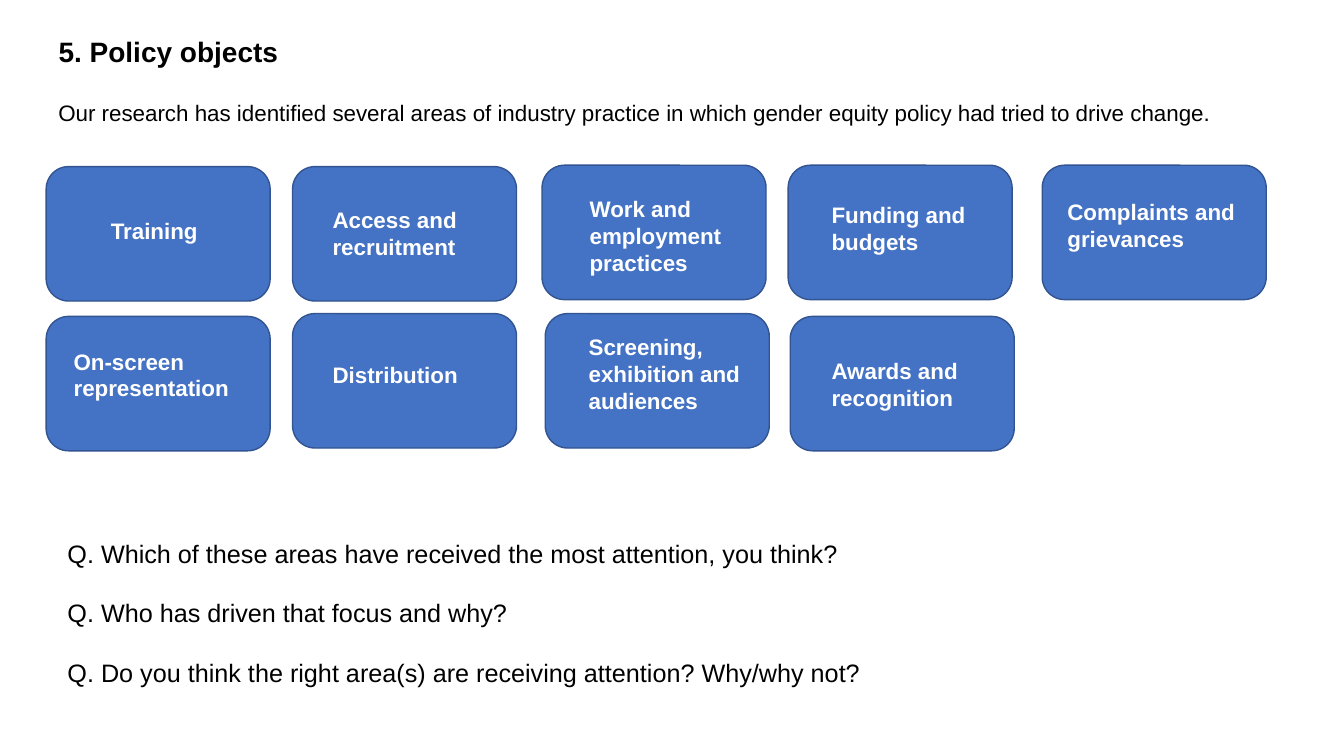
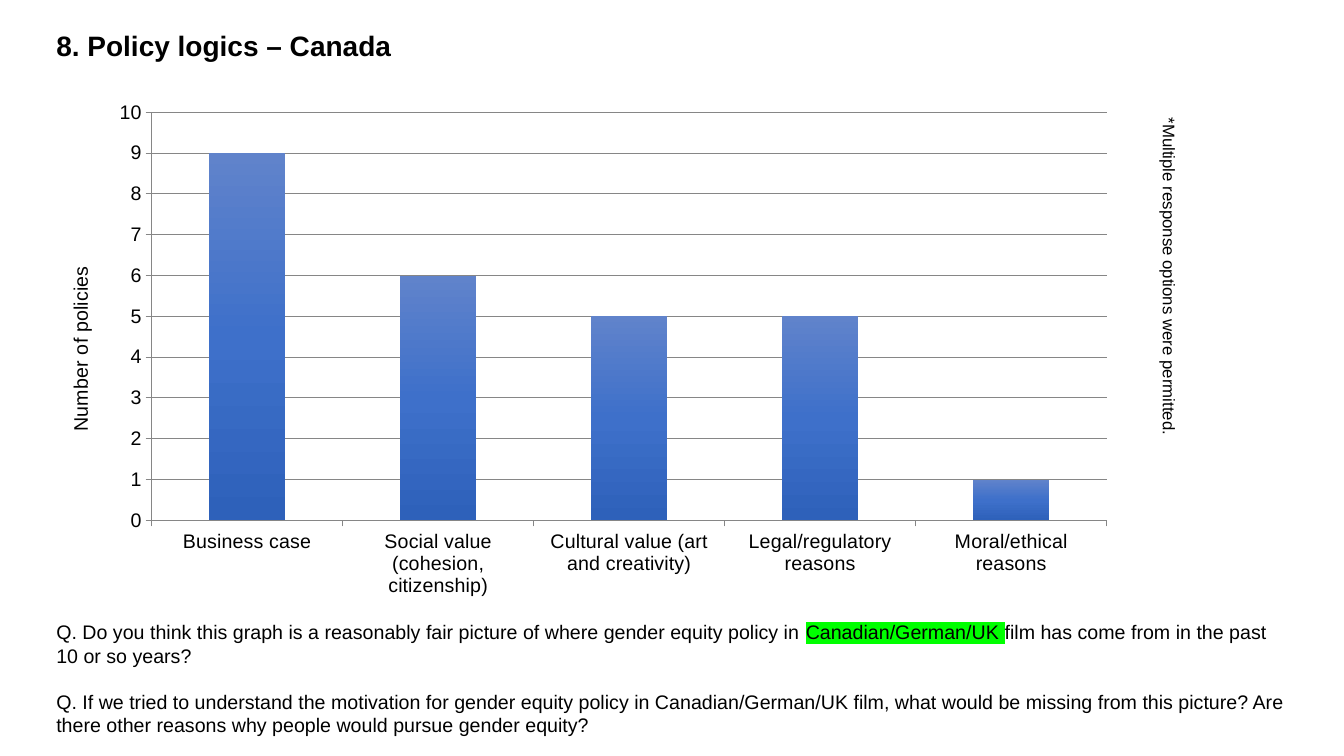
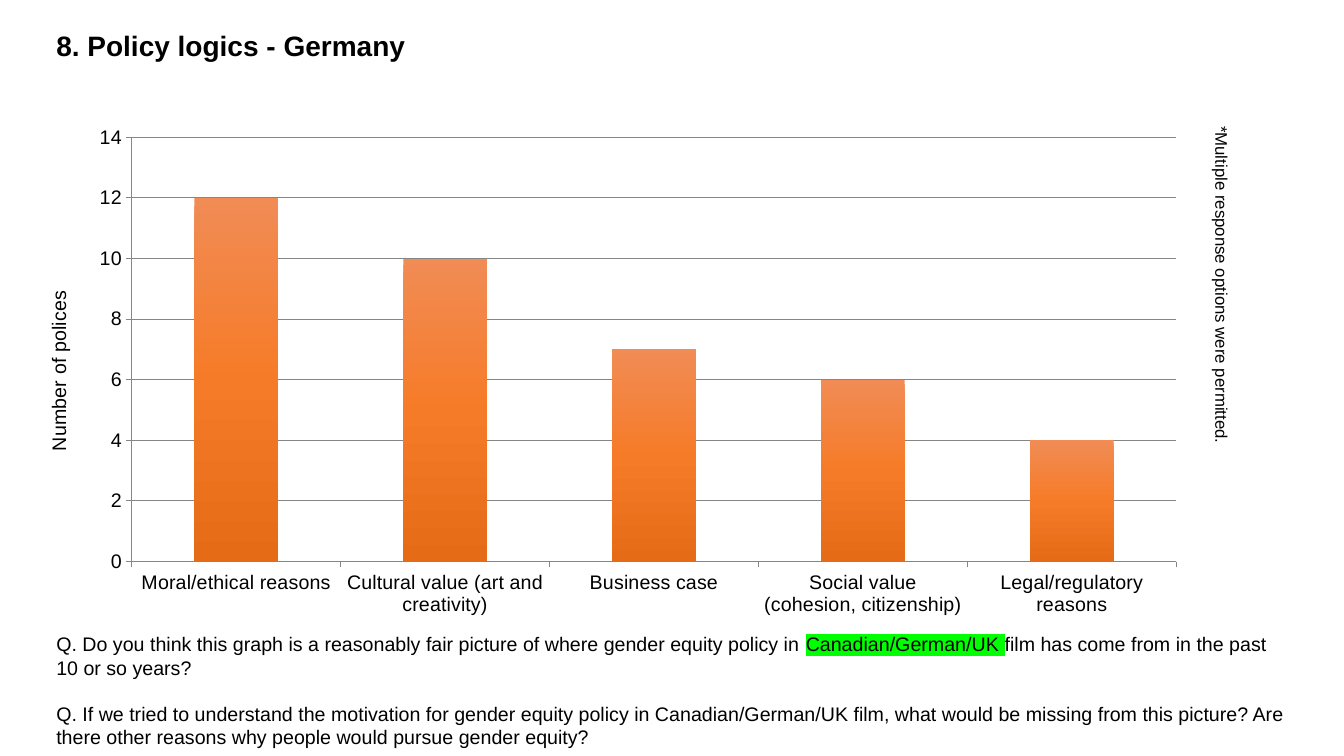
from copy import deepcopy

from lxml.etree import SubElement
from pptx import Presentation
from pptx.chart.data import CategoryChartData
from pptx.dml.color import RGBColor
from pptx.enum.chart import XL_CHART_TYPE as ChartType, XL_TICK_MARK as Tick
from pptx.enum.shapes import MSO_SHAPE as Shape
from pptx.enum.text import MSO_ANCHOR as Anchor, MSO_AUTO_SIZE as AutoSize, PP_ALIGN as Align
from pptx.oxml.ns import qn
from pptx.util import Pt

FONT = "Arial"
BLACK = RGBColor(0x00, 0x00, 0x00)
WHITE = RGBColor(0xFF, 0xFF, 0xFF)
GRID_GREY = RGBColor(0x86, 0x86, 0x86)
TILE_BLUE = RGBColor(0x44, 0x72, 0xC4)
TILE_EDGE = RGBColor(0x32, 0x54, 0x91)
HIGHLIGHT = RGBColor(0x00, 0xFF, 0x00)
# Bar gradients, top to bottom
BLUE_BARS = (RGBColor(0x60, 0x83, 0xCB), RGBColor(0x3E, 0x70, 0xCA), RGBColor(0x2E, 0x61, 0xBA))
ORANGE_BARS = (RGBColor(0xF1, 0x8C, 0x55), RGBColor(0xF6, 0x7B, 0x28), RGBColor(0xE5, 0x6B, 0x17))

LINE_HEIGHT = 1.15
TILE_W, TILE_H = 160, 96
CORNER_INSET = 4.7  # text margin a rounded rectangle adds by itself

INTRO = ("Our research has identified several areas of industry practice in which "
         "gender equity policy had tried to drive change.")
# label, tile (left, top), label start (left, top)
POLICY_AREAS = [
    ("Training", (33, 119), (79.2, 154.8)),
    ("Access and recruitment", (209, 119), (237.6, 147.6)),
    ("Work and employment practices", (387.2, 118), (421.2, 139.7)),
    ("Funding and budgets", (563, 118), (594, 144)),
    ("Complaints and grievances", (744.5, 118), (762.5, 141.8)),
    ("On-screen representation", (33, 226), (52.6, 248.4)),
    ("Distribution", (209, 224), (237.6, 257.8)),
    ("Screening, exhibition and audiences", (389.5, 224), (420.5, 238.3)),
    ("Awards and recognition", (564.5, 226), (594, 254.9)),
]
AREA_QUESTIONS = [
    ["Q. Which of these areas have received the most attention, you think?"],
    ["Q. Who has driven that focus and why?"],
    ["Q. Do you think the right area(s) are receiving attention? Why/why not?"],
]

LOGIC_QUESTIONS = [
    ["Q. Do you think this graph is a reasonably fair picture of where gender equity policy in ",
     "Canadian/German/UK ",
     "film has come from in the past 10 or so years?"],
    ["Q. If we tried to understand the motivation for gender equity policy in "
     "Canadian/German/UK film, what would be missing from this picture? "
     "Are there other reasons why people would pursue gender equity?"],
]
FOOTNOTE = "*Multiple response options were permitted."
BUSINESS = "Business case"
SOCIAL = "Social value (cohesion, citizenship)"
CULTURAL = "Cultural value (art and creativity)"
LEGAL = "Legal/regulatory reasons"
MORAL = "Moral/ethical reasons"
COUNTRIES = [
    dict(title="8. Policy logics – Canada", axis="Number of policies",
         counts={BUSINESS: 9, SOCIAL: 6, CULTURAL: 5, LEGAL: 5, MORAL: 1},
         bars=BLUE_BARS, top_value=10, step=1, chart_box=(33, 65, 773, 368.5),
         footnote_at=(835.2, 77), questions_top=439.2),
    dict(title="8. Policy logics - Germany", axis="Number of polices",
         counts={MORAL: 12, CULTURAL: 10, BUSINESS: 7, SOCIAL: 6, LEGAL: 4},
         bars=ORANGE_BARS, top_value=14, step=2, chart_box=(17.5, 83, 839.5, 364),
         footnote_at=(872.6, 83), questions_top=447.8),
]


def place(shape, left, top, width, height):
    shape.left, shape.top, shape.width, shape.height = map(Pt, (left, top, width, height))


def write(shape, paragraphs, size, colour=BLACK, bold=False):
    """Fill a shape with paragraphs, each a list of run texts, one line apart."""
    frame = shape.text_frame
    frame.word_wrap = True
    frame.auto_size = AutoSize.NONE
    frame.vertical_anchor = Anchor.TOP
    for index, texts in enumerate(paragraphs):
        paragraph = frame.add_paragraph() if index else frame.paragraphs[0]
        paragraph.alignment = Align.LEFT
        paragraph.space_before = Pt(round(size * LINE_HEIGHT, 1) if index else 0)
        for text in texts:
            run = paragraph.add_run()
            run.text = text
            run.font.size = Pt(size)
            run.font.bold = bold
            run.font.color.rgb = colour
            run.font.name = FONT
    return frame


def add_text(slide, text, size, box):
    label = slide.shapes.add_textbox(*map(Pt, box))
    write(label, [[text]], size)
    return label


def add_slide(deck, title, title_at, questions, size, questions_box):
    """Add a slide with its heading and unbulleted discussion questions."""
    slide = deck.slides.add_slide(deck.slide_layouts[1])
    heading, discussion = slide.placeholders
    place(heading, *title_at, 480, 32)
    write(heading, [[title]], 20, bold=True)
    place(discussion, *questions_box)
    for paragraph in write(discussion, questions, size).paragraphs:
        properties = paragraph._p.get_or_add_pPr()
        properties.set("marL", "0")
        properties.set("indent", "0")
        SubElement(properties, qn("a:buNone"))
    return slide, discussion


def highlight(run):
    properties = run._r.get_or_add_rPr()
    marker = SubElement(properties, qn("a:highlight"))
    SubElement(marker, qn("a:srgbClr")).set("val", str(HIGHLIGHT))
    properties.find(qn("a:latin")).addprevious(marker)


def add_tile(slide, label, corner, label_start):
    tile = slide.shapes.add_shape(Shape.ROUNDED_RECTANGLE, *map(Pt, (*corner, TILE_W, TILE_H)))
    tile.shadow.inherit = False
    tile.fill.solid()
    tile.fill.fore_color.rgb = TILE_BLUE
    tile.line.color.rgb = TILE_EDGE
    tile.line.width = Pt(1)
    frame = write(tile, [[label]], 16, WHITE, bold=True)
    frame.margin_left, frame.margin_top = (
        Pt(start - edge - CORNER_INSET) for start, edge in zip(label_start, corner))
    frame.margin_right = frame.margin_bottom = 0


def paint_bars(series, colours):
    fill = series.format.fill
    fill.gradient()
    fill.gradient_angle = 270
    first = fill.gradient_stops[0]._gs
    first.addnext(deepcopy(first))
    for index, (stop, colour) in enumerate(zip(fill.gradient_stops, colours)):
        stop.position = index / (len(colours) - 1)
        stop.color.rgb = colour


def add_policy_chart(slide, country):
    data = CategoryChartData()
    data.categories = list(country["counts"])
    data.add_series("Series 1", list(country["counts"].values()))
    chart = slide.shapes.add_chart(
        ChartType.COLUMN_CLUSTERED, *map(Pt, country["chart_box"]), data).chart
    chart.has_legend = chart.has_title = False
    chart.font.name = FONT
    chart.font.size = Pt(14)
    chart.font.color.rgb = BLACK
    plot = chart.plots[0]
    plot.gap_width = 150
    plot.vary_by_categories = False
    paint_bars(plot.series[0], country["bars"])

    values = chart.value_axis
    values.minimum_scale = 0
    values.maximum_scale = country["top_value"]
    values.major_unit = country["step"]
    values.has_major_gridlines = True
    for axis in (chart.category_axis, values):
        axis.major_tick_mark = Tick.OUTSIDE
        axis.format.line.color.rgb = GRID_GREY
    values.major_gridlines.format.line.color.rgb = GRID_GREY
    axis_title = values.axis_title.text_frame
    axis_title.text = country["axis"]
    font = axis_title.paragraphs[0].runs[0].font
    font.name, font.size, font.bold = FONT, Pt(14), False
    font.color.rgb = BLACK


def add_footnote(slide, centre, top, length=340, thickness=22):
    """Add the footnote reading downwards, starting at the given top."""
    box = (centre - length / 2, top + (length - thickness) / 2, length, thickness)
    add_text(slide, FOOTNOTE, 12, box).rotation = 90


def build_areas_slide(deck):
    slide, _ = add_slide(deck, "5. Policy objects", (34.6, 21),
                         AREA_QUESTIONS, 18, (41, 381, 878, 138))
    add_text(slide, INTRO, 16, (34.6, 67, 870, 26.6))
    for area in POLICY_AREAS:
        add_tile(slide, *area)


def build_country_slide(deck, country):
    slide, discussion = add_slide(deck, country["title"], (33, 16.6), LOGIC_QUESTIONS, 14,
                                  (33, country["questions_top"], 894.2, 92))
    highlight(discussion.text_frame.paragraphs[0].runs[1])
    add_policy_chart(slide, country)
    add_footnote(slide, *country["footnote_at"])


def main():
    deck = Presentation()
    deck.slide_width, deck.slide_height = Pt(960), Pt(540)
    build_areas_slide(deck)
    for country in COUNTRIES:
        build_country_slide(deck, country)
    deck.save("out.pptx")


if __name__ == "__main__":
    main()
